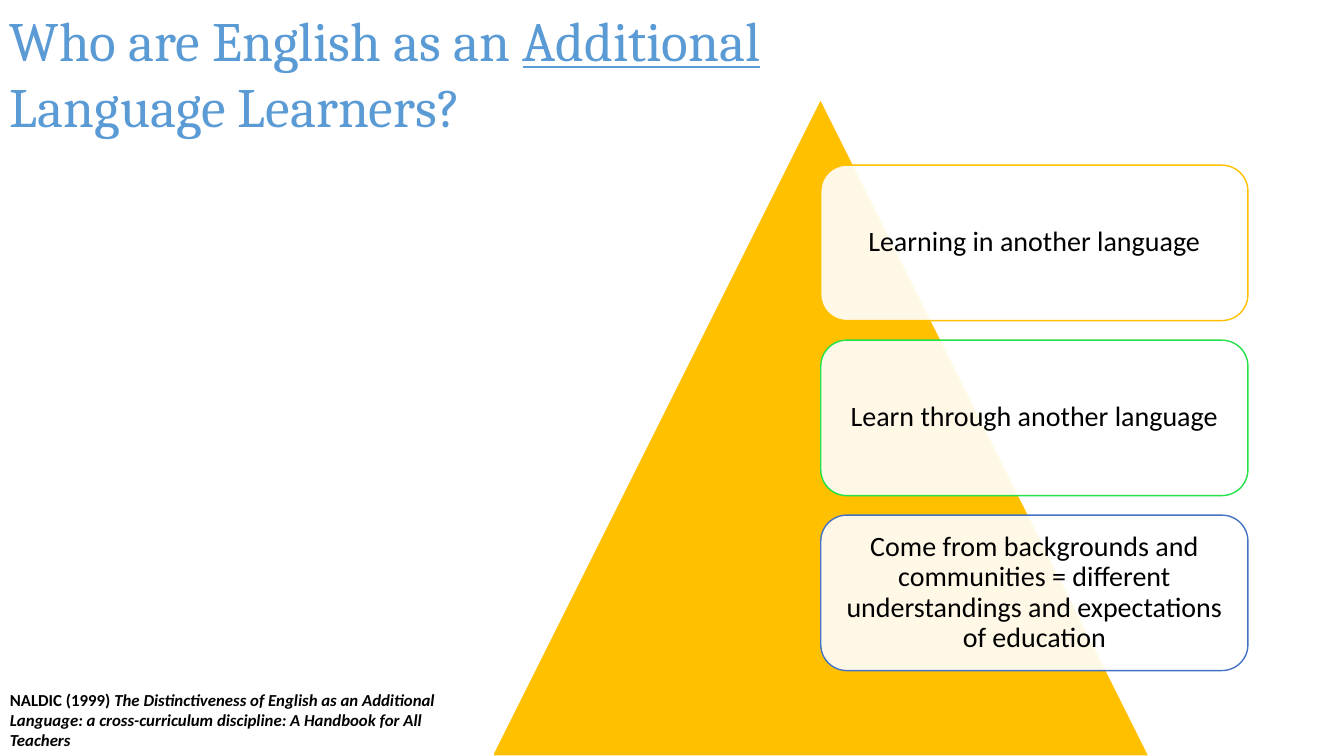
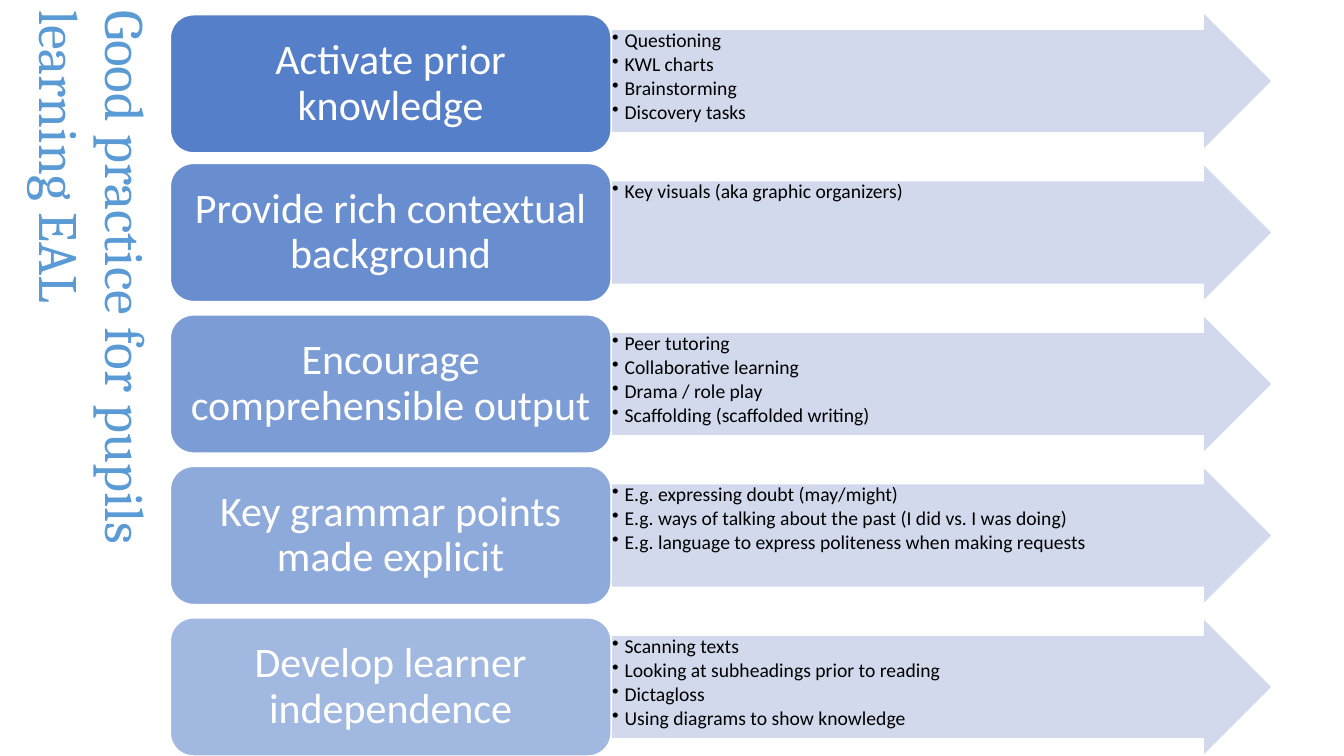
from lxml import etree
from pptx import Presentation
from pptx.dml.color import RGBColor
from pptx.enum import shapes, text
from pptx.oxml import ns
from pptx.util import Pt

COLORS = {
    "title": "5B9BD5", "text": "000000", "white": "FFFFFF",
    "gold": "FFC000", "green": "23E148", "blue": "4472C4", "arrow": "CFD5EA",
}
SHAPE = shapes.MSO_SHAPE
TITLE_FONT, BODY_FONT = "Cambria", "Calibri"


class Deck:
    """Holds the style and the slide being built."""

    def __init__(self, width, height):
        self.presentation = Presentation()
        self.presentation.slide_width = Pt(width)
        self.presentation.slide_height = Pt(height)
        self.slide = None

    def add_slide(self):
        self.slide = self.presentation.slides.add_slide(self.presentation.slide_layouts[6])

    def color(self, name):
        return RGBColor.from_string(COLORS[name])

    def frame(self, shape, insets, anchor):
        """Set wrapping, anchor and insets (left, top, right, bottom)."""
        frame = shape.text_frame
        frame.word_wrap = True
        frame.vertical_anchor = anchor
        (frame.margin_left, frame.margin_top,
         frame.margin_right, frame.margin_bottom) = map(Pt, insets)
        return frame

    def run(self, paragraph, words, size, color="text", font=BODY_FONT, **style):
        run = paragraph.add_run()
        run.text = words
        run.font.name = font
        run.font.size = Pt(size)
        run.font.color.rgb = self.color(color)
        for name, value in style.items():
            setattr(run.font, name, value)

    def title(self, box, runs, rotation=0, right_inset=7.2):
        """Add a title from (words, underlined) runs."""
        shape = self.slide.shapes.add_textbox(*map(Pt, box))
        shape.rotation = rotation
        frame = self.frame(shape, (7.2, 3.6, right_inset, 3.6), text.MSO_ANCHOR.MIDDLE)
        for words, underlined in runs:
            self.run(frame.paragraphs[0], words, 39.6, "title", TITLE_FONT, underline=underlined)

    def shape(self, kind, box, fill, line=None, opacity=100):
        shape = self.slide.shapes.add_shape(kind, *map(Pt, box))
        shape.shadow.inherit = False
        shape.fill.solid()
        shape.fill.fore_color.rgb = self.color(fill)
        if opacity < 100:
            fill_color = shape.element.spPr.find(ns.qn("a:solidFill"))[0]
            etree.SubElement(fill_color, ns.qn("a:alpha"), val=str(opacity * 1000))
        if line:
            shape.line.color.rgb = self.color(line)
            shape.line.width = Pt(1)
        else:
            shape.line.fill.background()
        return shape

    def label_box(self, box, words, size, color, fill, line, opacity, insets):
        shape = self.shape(SHAPE.ROUNDED_RECTANGLE, box, fill, line, opacity)
        paragraph = self.frame(shape, insets, text.MSO_ANCHOR.MIDDLE).paragraphs[0]
        paragraph.alignment = text.PP_ALIGN.CENTER
        paragraph.line_spacing = 0.9
        self.run(paragraph, words, size, color)

    def bullet_arrow(self, box, items):
        shape = self.shape(SHAPE.RIGHT_ARROW, box, "arrow", "white", 90)
        shape.adjustments[0], shape.adjustments[1] = 0.75, 0.5
        frame = self.frame(shape, (0.7,) * 4, text.MSO_ANCHOR.TOP)
        for index, item in enumerate(items):
            paragraph = frame.add_paragraph() if index else frame.paragraphs[0]
            properties = paragraph._p.get_or_add_pPr()
            properties.set("marL", str(Pt(9)))
            properties.set("indent", str(Pt(-9)))
            etree.SubElement(properties, ns.qn("a:buChar"), char="•")
            paragraph.level = 1
            paragraph.alignment = text.PP_ALIGN.LEFT
            paragraph.line_spacing = 0.9
            paragraph.space_after = Pt(2.1)
            self.run(paragraph, item, 14)

    def reference(self, box, source, work):
        shape = self.shape(SHAPE.RECTANGLE, box, "white")
        paragraph = self.frame(shape, (7.2, 3.6, 7.2, 3.6), text.MSO_ANCHOR.TOP).paragraphs[0]
        paragraph.alignment = text.PP_ALIGN.LEFT
        self.run(paragraph, source, 12, bold=True)
        self.run(paragraph, work, 12, bold=True, italic=True)


def add_learners_slide(deck):
    deck.add_slide()
    deck.title((0, 0, 676.8, 103.7), [
        ("Who are English as an ", False), ("Additional ", True), ("Language Learners?", False)])
    deck.shape(SHAPE.ISOSCELES_TRIANGLE, (351.4, 70.6, 469.4, 469.4), "gold", "white")
    features = [
        ("Learning in another language", "gold"),
        ("Learn through another language", "green"),
        ("Come from backgrounds and communities = different understandings "
         "and expectations of education", "blue"),
    ]
    for row, (words, line) in enumerate(features):
        deck.label_box((586.3, 118 + row * 125, 305.1, 111), words, 20, "text",
                       "white", line, 90, (6, 6, 6, 6))
    deck.reference((0, 488.9, 352.8, 51.1), "NALDIC (1999) ",
                   "The Distinctiveness of English as an Additional Language: "
                   "a cross-curriculum discipline: A Handbook for All Teachers")


def add_practice_slide(deck):
    deck.add_slide()
    deck.title((-202.3, 249.8, 540, 41), [("Good practice for pupils learning EAL", False)],
               rotation=90, right_inset=18)
    practices = [
        ("Activate prior knowledge",
         ["Questioning", "KWL charts", "Brainstorming", "Discovery tasks"]),
        ("Provide rich contextual background", ["Key visuals (aka graphic organizers)"]),
        ("Encourage comprehensible output",
         ["Peer tutoring", "Collaborative learning", "Drama / role play",
          "Scaffolding (scaffolded writing)"]),
        ("Key grammar points made explicit",
         ["E.g. expressing doubt (may/might)",
          "E.g. ways of talking about the past (I did vs. I was doing)",
          "E.g. language to express politeness when making requests"]),
        ("Develop learner independence",
         ["Scanning texts", "Looking at subheadings prior to reading", "Dictagloss",
          "Using diagrams to show knowledge"]),
    ]
    height, pitch = 98.6, 108.2
    for row, (practice, examples) in enumerate(practices):
        top = 8.6 + row * pitch
        label_top = top if row else top + 2
        deck.bullet_arrow((436.5, top, 472.3, height), examples)
        deck.label_box((121.7, label_top, 314.8, height), practice, 30, "white",
                       "blue", "white", 90 - row * 10, (8, 4, 8, 4))


def main():
    deck = Deck(960, 540)
    add_learners_slide(deck)
    add_practice_slide(deck)
    deck.presentation.save("out.pptx")


if __name__ == "__main__":
    main()
